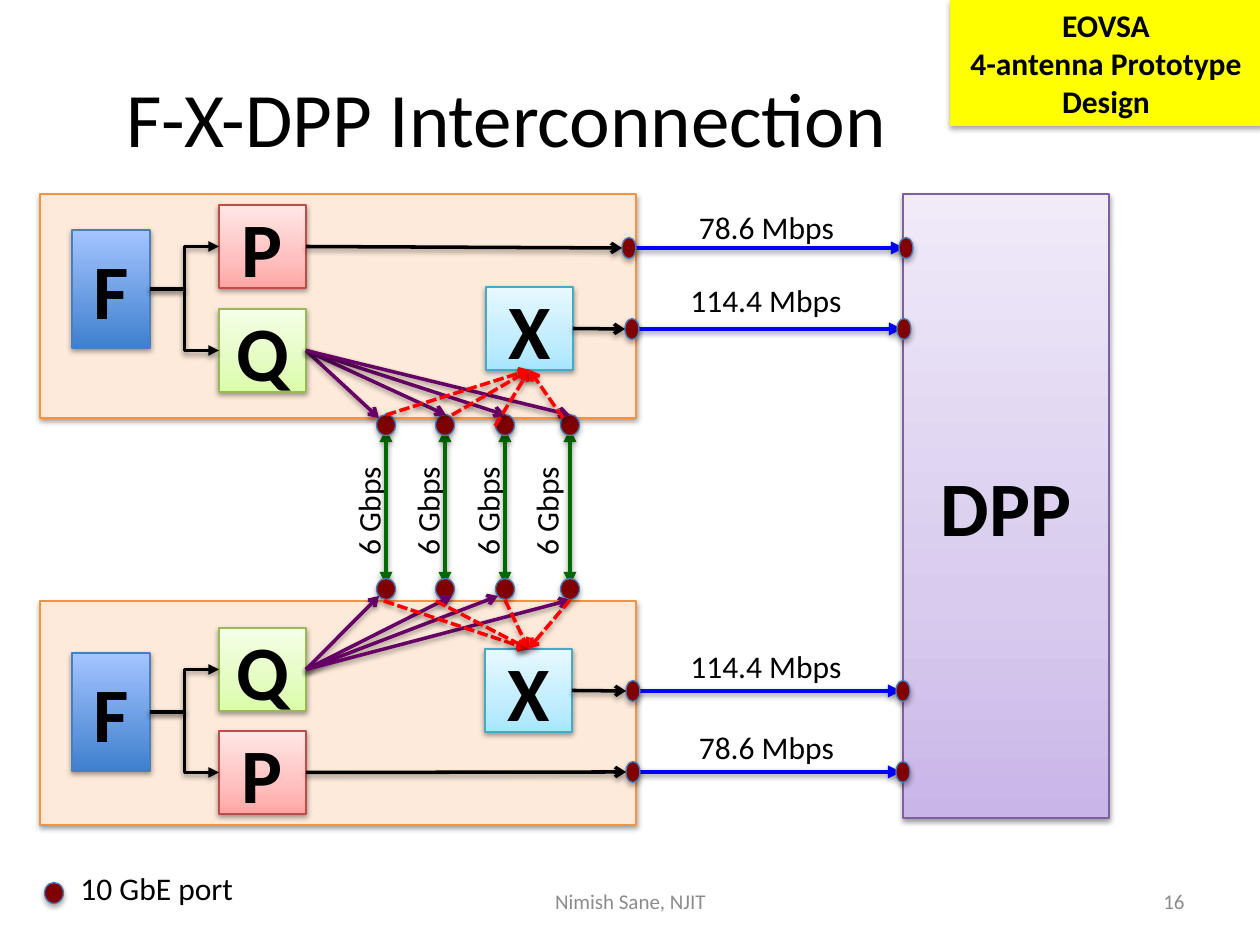
from copy import deepcopy

from lxml.etree import SubElement
from pptx import Presentation
from pptx.dml.color import RGBColor
from pptx.enum.dml import MSO_LINE
from pptx.enum.shapes import MSO_CONNECTOR as Link, MSO_SHAPE as Preset
from pptx.enum.text import MSO_ANCHOR as Anchor, PP_ALIGN as Align
from pptx.oxml.ns import qn
from pptx.util import Pt

PX = 914400 / 126
TOP, LEFT, BOTTOM, RIGHT = range(4)
COLORS = {
    "text": "000000", "muted": "8C8C8C", "note": "FFFF00",
    "board": "FDEADA", "board_line": "F69240",
    "port": "800000", "port_line": "4B7EBC",
    "wire": "000000", "uplink": "0000FF", "exchange": "006900",
    "send": "660066", "receive": "FF0000",
}
# Each block: gradient stops from the bottom up, then the outline
BLOCKS = {
    "F": (["3F80CE", "A4C4FF"], "4B7EBC"),
    "P": (["FFA6A5", "FFC0BF", "FFE7E7"], "BF4C48"),
    "Q": (["DAFDA7", "E4FCC2", "F5FFE7"], "98B955"),
    "X": (["A7E6FF", "C1EDFF", "E7F8FF"], "46AAC5"),
    "DPP": (["C9B5E8", "D8CBEE", "F0EAF9"], "7D60A0"),
}
# Positions inside each board, relative to its top left corner
UPPER = {
    "box": (40, 194, 596, 224),
    "blocks": {"F": (32, 36), "P": (179, 11), "Q": (179, 115), "X": (446, 93)},
    "outputs": {"P": (582, 54), "X": (585, 135)},
    "send": [(339, 224), (406, 221), (465, 221), (530, 221)],
    "receive": [(346, 221), (412, 221), (455, 232), (523, 224)],
    "x_side": BOTTOM,
}
LOWER = {
    "box": (40, 601, 596, 224),
    "blocks": {"F": (32, 52), "Q": (179, 27), "P": (179, 130), "X": (445, 48)},
    "outputs": {"X": (586, 90), "P": (586, 171)},
    "send": [(339, -5), (412, -5), (458, -5), (530, -1)],
    "receive": [(344, 0), (396, 0), (465, -1), (530, -1)],
    "x_side": TOP,
}
# Port centre and label centre of each exchange link
EXCHANGES = [(386, 368), (445, 427), (505, 487), (570, 546)]
# Row, left and right port centres, label and its width and top
UPLINKS = [
    (248, 629, 906, "78.6 Mbps", 163, 202),
    (329, 632, 904, "114.4 Mbps", 180, 275),
    (691, 633, 903, "114.4 Mbps", 180, 641),
    (772, 633, 903, "78.6 Mbps", 163, 722),
]


def emu(*lengths):
    return [round(length * PX) for length in lengths]


def rgb(name):
    return RGBColor.from_string(COLORS.get(name, name))


def add_shadow(effects, strength=38):
    shadow = SubElement(effects, qn("a:outerShdw"), blurRad="40000", dist="20000",
                        dir="5400000", rotWithShape="0")
    black = SubElement(shadow, qn("a:srgbClr"), val="000000")
    SubElement(black, qn("a:alpha"), val=str(strength * 1000))


def write(shape, lines, size, color="text", bold=False, align=Align.CENTER):
    frame = shape.text_frame
    frame.text = "\n".join(lines)
    for para in frame.paragraphs:
        para.alignment = align
        para.font.name, para.font.size, para.font.bold = "Calibri", Pt(size), bold
        para.font.color.rgb = rgb(color)


def add_label(page, box, text, size=18, color="text", align=Align.LEFT,
              anchor=Anchor.TOP, wrap=False):
    label = page.shapes.add_textbox(*emu(*box))
    label.text_frame.word_wrap = wrap
    label.text_frame.vertical_anchor = anchor
    write(label, [text], size, color, align=align)
    return label


def add_box(page, box, fill, line=None, preset=Preset.RECTANGLE, strength=38):
    shape = page.shapes.add_shape(preset, *emu(*box))
    if isinstance(fill, list):
        shape.fill.gradient()
        shape.fill.gradient_angle = 90
        if len(fill) == 3:
            stops = shape.element.spPr.find(".//" + qn("a:gsLst"))
            stops.insert(1, deepcopy(stops[0]))
        positions = [0, 0.35, 1] if len(fill) == 3 else [0, 1]
        for stop, color, position in zip(shape.fill.gradient_stops, fill, positions):
            stop.color.rgb, stop.position = rgb(color), position
    else:
        shape.fill.solid()
        shape.fill.fore_color.rgb = rgb(fill)
    if line:
        shape.line.color.rgb, shape.line.width = rgb(line), Pt(0.75)
    else:
        shape.line.fill.background()
    shape.shadow.inherit = False
    add_shadow(shape.element.spPr.find(qn("a:effectLst")), strength)
    return shape


def add_block(page, name, box):
    fill, line = BLOCKS[name]
    block = add_box(page, box, fill, line)
    write(block, [name], 44, bold=True)
    return block


def add_port(page, x, y, width=19):
    add_box(page, (x - width / 2, y - 10.5, width, 21), "port", "port_line",
            Preset.FLOWCHART_CONNECTOR, 35)


def add_arrow(page, start, end, color, width=2, tail="arrow", head=None,
              kind=Link.STRAIGHT, dashed=False):
    """Each end is a point, or a (shape, side) pair to join."""
    ends = [point if isinstance(point[0], (int, float)) else (0, 0)
            for point in (start, end)]
    arrow = page.shapes.add_connector(kind, *emu(*ends[0], *ends[1]))
    for point, join in ((start, arrow.begin_connect), (end, arrow.end_connect)):
        if not isinstance(point[0], (int, float)):
            join(*point)
    arrow.line.color.rgb, arrow.line.width = rgb(color), Pt(width)
    if dashed:
        arrow.line.dash_style = MSO_LINE.SQUARE_DOT
    outline = arrow.get_or_add_ln()
    if head:
        SubElement(outline, qn("a:headEnd"), type=head)
    SubElement(outline, qn("a:tailEnd"), type=tail)
    add_shadow(SubElement(arrow.element.spPr, qn("a:effectLst")))


def draw_board(page, board):
    left, top, _, _ = board["box"]
    add_box(page, board["box"], "board", "board_line")
    blocks = {}
    for name, (x, y) in board["blocks"].items():
        size = (78, 118) if name == "F" else (87, 83)
        blocks[name] = add_block(page, name, (left + x, top + y, *size))
    for name in "PQ":
        add_arrow(page, (blocks["F"], RIGHT), (blocks[name], LEFT), "wire",
                  tail="triangle", kind=Link.ELBOW)
    return blocks


def draw_board_wires(page, board, blocks):
    left, top, _, _ = board["box"]
    for name, (x, y) in board["outputs"].items():
        add_arrow(page, (blocks[name], RIGHT), (left + x, top + y), "wire")
    for x, y in board["send"]:
        add_arrow(page, (blocks["Q"], RIGHT), (left + x, top + y), "send")
    for x, y in board["receive"]:
        add_arrow(page, (left + x, top + y), (blocks["X"], board["x_side"]),
                  "receive", dashed=True)


def draw_exchange(page, x, label_x, top, bottom):
    middle = (top + bottom) / 2
    label = add_label(page, (label_x - 57.5, middle + 3 - 25, 115, 50), "6 Gbps")
    label.rotation = 270
    add_arrow(page, (x, top + 4), (x, bottom - 4), "exchange", 2.5, "triangle", "triangle")
    add_port(page, x, top)
    add_port(page, x, bottom)


def draw_uplink(page, y, left, right, text, width, label_top):
    add_label(page, (768 - width / 2, label_top, width, 50), text)
    add_arrow(page, (left + 2, y), (right - 2, y), "uplink", 2.5, "triangle")
    add_port(page, left, y, 14)
    add_port(page, right, y, 14)


def draw_legend(page, left, top):
    add_port(page, left + 10, top + 30)
    add_label(page, (left + 24, top, 180, 50), "10 GbE port")


def main():
    deck = Presentation()
    deck.slide_width, deck.slide_height = emu(1260, 945)
    page = deck.slides.add_slide(deck.slide_layouts[6])

    # Title, corner note and footer
    add_label(page, (63, 38, 887, 157), "F-X-DPP Interconnection", 44,
              align=Align.CENTER, anchor=Anchor.MIDDLE, wrap=True)
    note = add_box(page, (950, 0, 312, 126), "note", strength=35)
    write(note, ["EOVSA", "4-antenna Prototype Design"], 18, bold=True)
    for box, text, align in (((431, 876, 399, 50), "Nimish Sane, NJIT", Align.CENTER),
                             ((903, 876, 294, 50), "16", Align.RIGHT)):
        add_label(page, box, text, 12, "muted", align, Anchor.MIDDLE, True)

    # Boards and links, with the board wires on top
    boards = [(board, draw_board(page, board)) for board in (UPPER, LOWER)]
    add_block(page, "DPP", (903, 194, 206, 624))
    for x, label_x in EXCHANGES:
        draw_exchange(page, x, label_x, 425, 589)
    for uplink in UPLINKS:
        draw_uplink(page, *uplink)
    for board, blocks in boards:
        draw_board_wires(page, board, blocks)
    draw_legend(page, 44, 863)

    deck.save("out.pptx")


if __name__ == "__main__":
    main()
